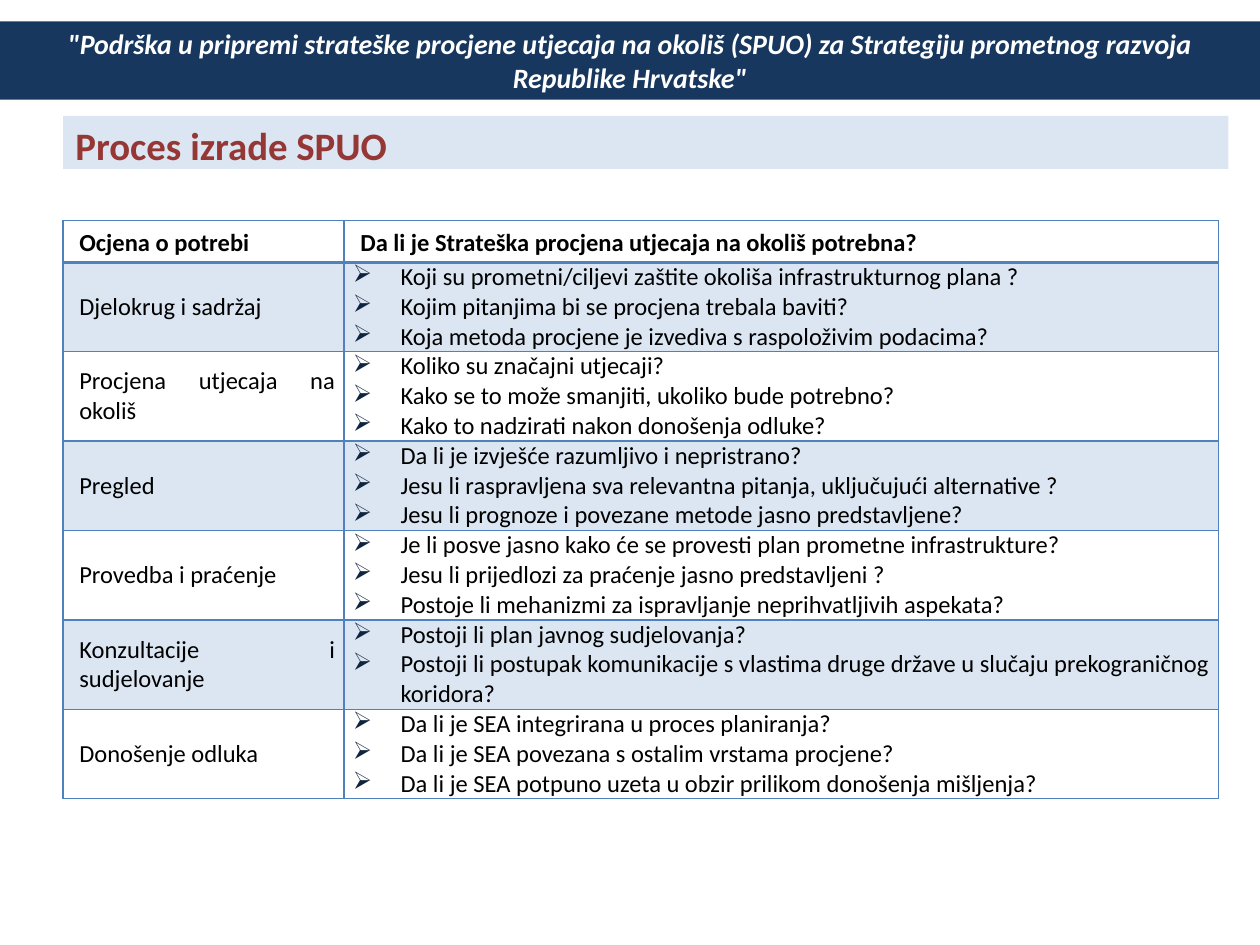
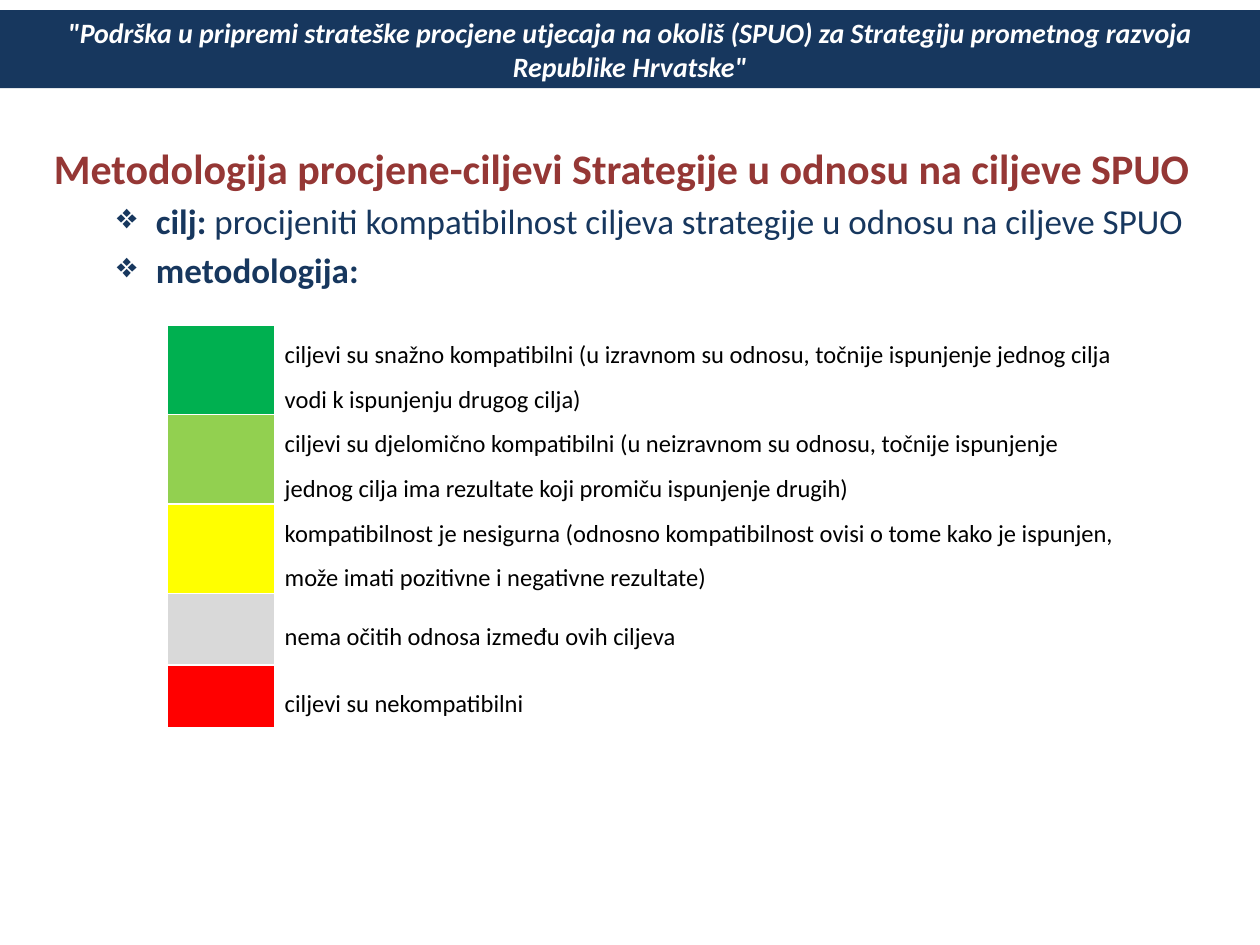
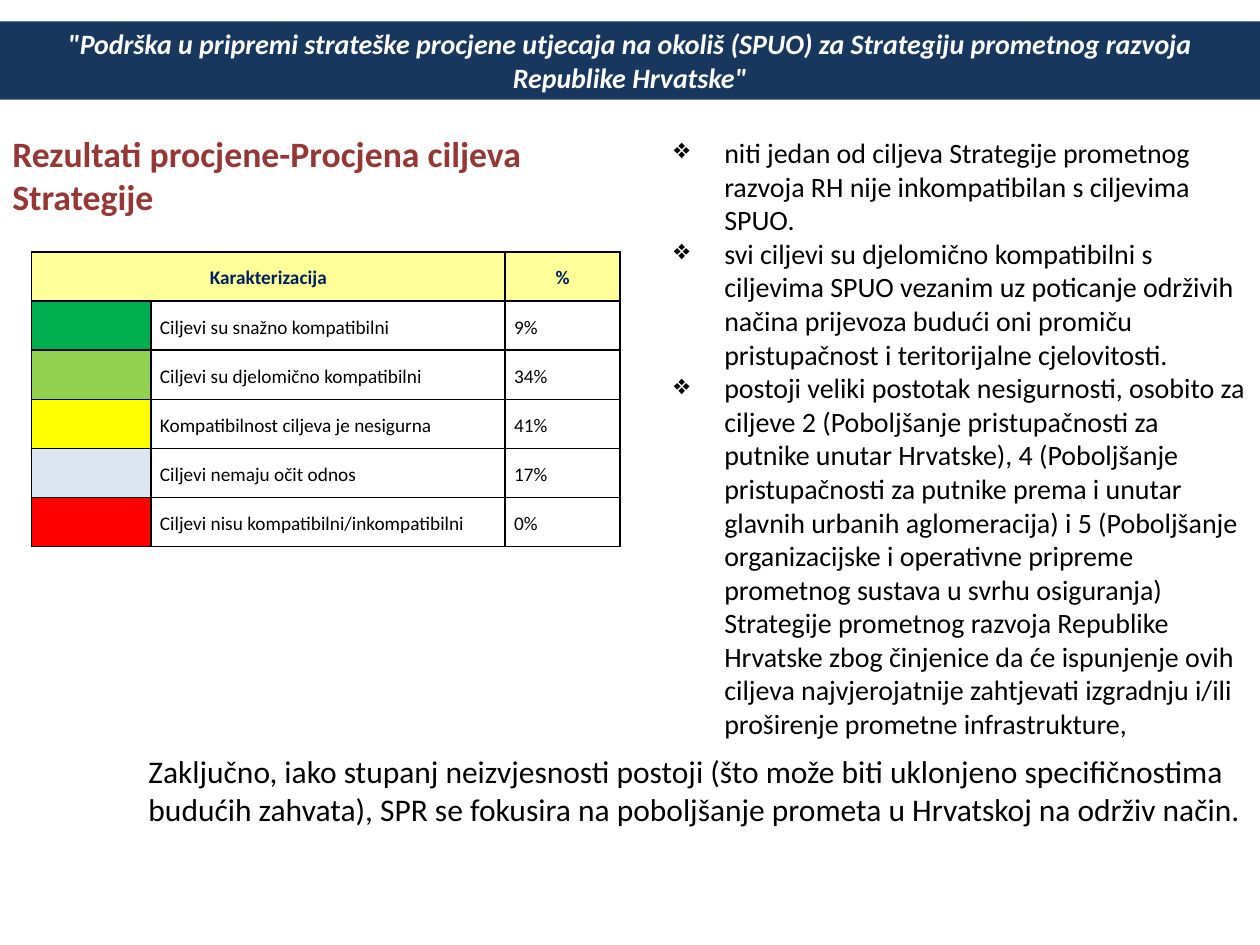
import pptx
import pptx.util
import pptx.dml.color
import pptx.enum.text
import pptx.enum.shapes
import pptx.oxml.ns
from lxml import etree

Inches = pptx.util.Inches
ALIGN = pptx.enum.text.PP_ALIGN
ANCHOR = pptx.enum.text.MSO_ANCHOR


class Theme:
    font = "Calibri"
    navy, white, black = "17375E", "FFFFFF", "000000"
    heading, pale_blue, table_blue = "953735", "DCE6F2", "4F81BD"
    arrow, header_yellow, header_text = "0F243E", "FFFF99", "002060"
    green, light_green, yellow, grey, ice, red = (
        "00B050", "92D050", "FFFF00", "D9D9D9", "DCE6F1", "FF0000")
    band_size, process_size, method_size, results_size = 16, 22.2, 24, 20.4
    goal_size, conclusion_size, body_size, table_size, small_size = 20, 18, 16, 14, 11


# Content
PROJECT = ('"Podrška u pripremi strateške procjene utjecaja na okoliš (SPUO) '
           'za Strategiju prometnog razvoja Republike Hrvatske"')

PROCESS_TITLE = "Proces izrade SPUO"
PROCESS_HEADER = ("Ocjena o potrebi", "Da li je Strateška procjena utjecaja na okoliš potrebna?")
PROCESS_STEPS = [
    ("Djelokrug i sadržaj", [
        "Koji su prometni/ciljevi zaštite okoliša infrastrukturnog plana ?",
        "Kojim pitanjima bi se procjena trebala baviti?",
        "Koja metoda procjene je izvediva s raspoloživim podacima?"]),
    ("Procjena utjecaja na okoliš", [
        "Koliko su značajni utjecaji?",
        "Kako se to može smanjiti, ukoliko bude potrebno?",
        "Kako to nadzirati nakon donošenja odluke?"]),
    ("Pregled", [
        "Da li je izvješće razumljivo i nepristrano?",
        "Jesu li raspravljena sva relevantna pitanja, uključujući alternative ?",
        "Jesu li prognoze i povezane metode jasno predstavljene?"]),
    ("Provedba i praćenje", [
        "Je li posve jasno kako će se provesti plan prometne infrastrukture?",
        "Jesu li prijedlozi za praćenje jasno predstavljeni ?",
        "Postoje li mehanizmi za ispravljanje neprihvatljivih aspekata?"]),
    ("Konzultacije i sudjelovanje", [
        "Postoji li plan javnog sudjelovanja?",
        "Postoji li postupak komunikacije s vlastima druge države u slučaju "
        "prekograničnog koridora?"]),
    ("Donošenje odluka", [
        "Da li je SEA integrirana u proces planiranja?",
        "Da li je SEA povezana s ostalim vrstama procjene?",
        "Da li je SEA potpuno uzeta u obzir prilikom donošenja mišljenja?"]),
]

METHOD_TITLE = "Metodologija procjene-ciljevi Strategije u odnosu na ciljeve SPUO"
METHOD_POINTS = [
    ("cilj: ", "procijeniti kompatibilnost ciljeva strategije u odnosu na ciljeve SPUO"),
    ("metodologija:", ""),
]
# Colour, meaning, row height
LEGEND = [
    (Theme.green, "ciljevi su snažno kompatibilni (u izravnom su odnosu, točnije "
     "ispunjenje jednog cilja vodi k ispunjenju drugog cilja)", 0.71),
    (Theme.light_green, "ciljevi su djelomično kompatibilni (u neizravnom su odnosu, točnije "
     "ispunjenje jednog cilja ima rezultate koji promiču ispunjenje drugih)", 0.71),
    (Theme.yellow, "kompatibilnost je nesigurna (odnosno kompatibilnost ovisi o tome kako je "
     "ispunjen, može imati pozitivne i negativne rezultate)", 0.71),
    (Theme.grey, "nema očitih odnosa između ovih ciljeva", 0.57),
    (Theme.red, "ciljevi su nekompatibilni", 0.5),
]

RESULTS_TITLE = "Rezultati procjene-Procjena ciljeva Strategije"
RESULTS_HEADER = ("Karakterizacija", "%")
RESULTS = [
    (Theme.green, "Ciljevi su snažno kompatibilni", "9%"),
    (Theme.light_green, "Ciljevi su djelomično kompatibilni", "34%"),
    (Theme.yellow, "Kompatibilnost ciljeva je nesigurna", "41%"),
    (Theme.ice, "Ciljevi nemaju očit odnos", "17%"),
    (Theme.red, "Ciljevi nisu kompatibilni/inkompatibilni", "0%"),
]
FINDINGS = [
    "niti jedan od ciljeva Strategije prometnog razvoja RH nije inkompatibilan s ciljevima SPUO.",
    "svi ciljevi su djelomično kompatibilni s ciljevima SPUO vezanim uz poticanje održivih "
    "načina prijevoza budući oni promiču pristupačnost i teritorijalne cjelovitosti.",
    "postoji veliki postotak nesigurnosti, osobito za ciljeve 2 (Poboljšanje pristupačnosti za "
    "putnike unutar Hrvatske), 4 (Poboljšanje pristupačnosti za putnike prema i unutar glavnih "
    "urbanih aglomeracija) i 5 (Poboljšanje organizacijske i operativne pripreme prometnog "
    "sustava u svrhu osiguranja) Strategije prometnog razvoja Republike Hrvatske zbog činjenice "
    "da će ispunjenje ovih ciljeva najvjerojatnije zahtjevati izgradnju i/ili proširenje "
    "prometne infrastrukture,",
]
CONCLUSION = ("Zaključno, iako stupanj neizvjesnosti postoji (što može biti uklonjeno "
              "specifičnostima budućih zahvata), SPR se fokusira na poboljšanje prometa u "
              "Hrvatskoj na održiv način.")


# Text helpers
def rgb(color):
    return pptx.dml.color.RGBColor.from_string(color)


def set_fill(target, color):
    target.fill.solid()
    target.fill.fore_color.rgb = rgb(color)


def add_xml(parent, tag, **attributes):
    return etree.SubElement(parent, pptx.oxml.ns.qn(tag), **attributes)


def set_indent(paragraph, left, first=0, bullet=None, bullet_color=None):
    properties = paragraph._p.get_or_add_pPr()
    properties.set("marL", str(Inches(left)))
    properties.set("indent", str(Inches(first)))
    if bullet_color:
        add_xml(add_xml(properties, "a:buClr"), "a:srgbClr", val=bullet_color)
    if bullet:
        add_xml(properties, "a:buChar", char=bullet)


def style_runs(paragraph, size, color, bold=False, italic=False):
    for run in paragraph.runs:
        run.font.name, run.font.size = Theme.font, pptx.util.Pt(size)
        run.font.color.rgb = rgb(color)
        run.font.bold, run.font.italic = bold, italic


def write(frame, lines, size, color=Theme.black, bold=False, italic=False,
          align=ALIGN.LEFT, spacing=None, indent=None):
    """Write one paragraph per line; indent holds the arguments of set_indent."""
    frame.text = "\n".join(lines)
    for paragraph in frame.paragraphs:
        if indent:
            set_indent(paragraph, *indent)
        paragraph.alignment = align
        if spacing:
            paragraph.line_spacing = spacing
        style_runs(paragraph, size, color, bold, italic)


# Slide parts
def add_slide(presentation, band_top=0.17):
    slide = presentation.slides.add_slide(presentation.slide_layouts[5])
    band = slide.shapes.title
    band.left, band.top = 0, Inches(band_top)
    band.width, band.height = presentation.slide_width, Inches(0.62)
    set_fill(band, Theme.navy)
    frame = band.text_frame
    frame.auto_size = pptx.enum.text.MSO_AUTO_SIZE.NONE
    frame.vertical_anchor = ANCHOR.MIDDLE
    write(frame, [PROJECT], Theme.band_size, Theme.white, True, True, ALIGN.CENTER)
    return slide


def add_text(slide, box, fill=None):
    shape = slide.shapes.add_textbox(*map(Inches, box))
    shape.text_frame.word_wrap = True
    if fill:
        set_fill(shape, fill)
    return shape.text_frame


def set_border(cell, side, color, width):
    line = add_xml(cell._tc.get_or_add_tcPr(), "a:ln" + side, w=str(pptx.util.Pt(width)))
    add_xml(add_xml(line, "a:solidFill"), "a:srgbClr", val=color)


def add_table(slide, left, top, columns, rows, border, margins=(0.07, 0.07), header_line=1):
    table = slide.shapes.add_table(
        len(rows), len(columns), Inches(left), Inches(top),
        Inches(sum(columns)), Inches(sum(rows))).table
    table.first_row = table.horz_banding = False
    for column, width in zip(table.columns, columns):
        column.width = Inches(width)
    for index, (row, height) in enumerate(zip(table.rows, rows)):
        row.height = Inches(height)
        for cell in row.cells:
            for side in "LRTB":
                under_header = (index, side) in ((0, "B"), (1, "T"))
                set_border(cell, side, border, header_line if under_header else 1)
            cell.fill.background()
            cell.vertical_anchor = ANCHOR.MIDDLE
            cell.margin_left, cell.margin_right = map(Inches, margins)
            cell.margin_top = cell.margin_bottom = 0
    return table


# Slides
def add_process_slide(presentation):
    slide = add_slide(presentation)
    write(add_text(slide, (0.5, 0.92, 9.25, 0.42), Theme.pale_blue), [PROCESS_TITLE],
          Theme.process_size, Theme.heading, True)

    table = add_table(slide, 0.5, 1.75, (2.23, 6.94), [0.33] + [0.71] * len(PROCESS_STEPS),
                      Theme.table_blue, header_line=2)
    label_indent, question_indent = (0.06,), (0.38, -0.38, "➢", Theme.arrow)
    for column, heading in enumerate(PROCESS_HEADER):
        write(table.cell(0, column).text_frame, [heading], Theme.table_size, bold=True,
              align=ALIGN.JUSTIFY, spacing=1.15, indent=label_indent)
    for row, (step, questions) in enumerate(PROCESS_STEPS, start=1):
        for column, (lines, indent) in enumerate(
                [([step], label_indent), (questions, question_indent)]):
            cell = table.cell(row, column)
            write(cell.text_frame, lines, Theme.table_size, align=ALIGN.JUSTIFY, indent=indent)
            if row % 2:
                set_fill(cell, Theme.pale_blue)


def add_method_slide(presentation):
    slide = add_slide(presentation, band_top=0.08)
    frame = add_text(slide, (0.33, 1.08, 9.33, 1.4))
    write(frame, [METHOD_TITLE], Theme.method_size, Theme.heading, True)
    for label, explanation in METHOD_POINTS:
        paragraph = frame.add_paragraph()
        set_indent(paragraph, 0.81, -0.31, "❖")
        paragraph.space_before = pptx.util.Pt(0.2 * Theme.goal_size)
        paragraph.text = label
        style_runs(paragraph, Theme.goal_size, Theme.navy)
        if explanation:
            paragraph.add_run().text = explanation
            style_runs(paragraph, Theme.goal_size, Theme.navy)
        paragraph.runs[0].font.bold = True

    table = add_table(slide, 1.33, 2.58, (0.85, 6.73), [height for _, _, height in LEGEND],
                      Theme.white, margins=(0.08, 0))
    for row, (color, meaning, _) in enumerate(LEGEND):
        set_fill(table.cell(row, 0), color)
        write(table.cell(row, 1).text_frame, [meaning], Theme.table_size, spacing=1.5)


def add_results_slide(presentation):
    slide = add_slide(presentation)
    table = add_table(slide, 0.25, 2, (0.95, 2.81, 0.91), [0.39] * (len(RESULTS) + 1),
                      Theme.black)
    table.cell(0, 0).merge(table.cell(0, 1))
    for column, heading in zip((0, 2), RESULTS_HEADER):
        cell = table.cell(0, column)
        set_fill(cell, Theme.header_yellow)
        write(cell.text_frame, [heading], Theme.small_size, Theme.header_text, True,
              align=ALIGN.CENTER, spacing=1.15)
    for row, (color, *texts) in enumerate(RESULTS, start=1):
        set_fill(table.cell(row, 0), color)
        for column, text in enumerate(texts, start=1):
            write(table.cell(row, column).text_frame, [text], Theme.small_size,
                  align=ALIGN.JUSTIFY, spacing=1.15)

    write(add_text(slide, (0, 1, 5.33, 0.67), Theme.white), [RESULTS_TITLE],
          Theme.results_size, Theme.heading, True)
    findings = add_text(slide, (5.25, 1, 4.75, 4.95))
    findings.vertical_anchor = ANCHOR.MIDDLE
    write(findings, FINDINGS, Theme.body_size, indent=(0.4, -0.4, "❖"))
    write(add_text(slide, (1.08, 5.92, 9.08, 1.01)), [CONCLUSION], Theme.conclusion_size)


def main():
    presentation = pptx.Presentation()
    presentation.slide_width, presentation.slide_height = Inches(10), Inches(7.5)
    add_process_slide(presentation)
    add_method_slide(presentation)
    add_results_slide(presentation)
    presentation.save("out.pptx")


if __name__ == "__main__":
    main()
